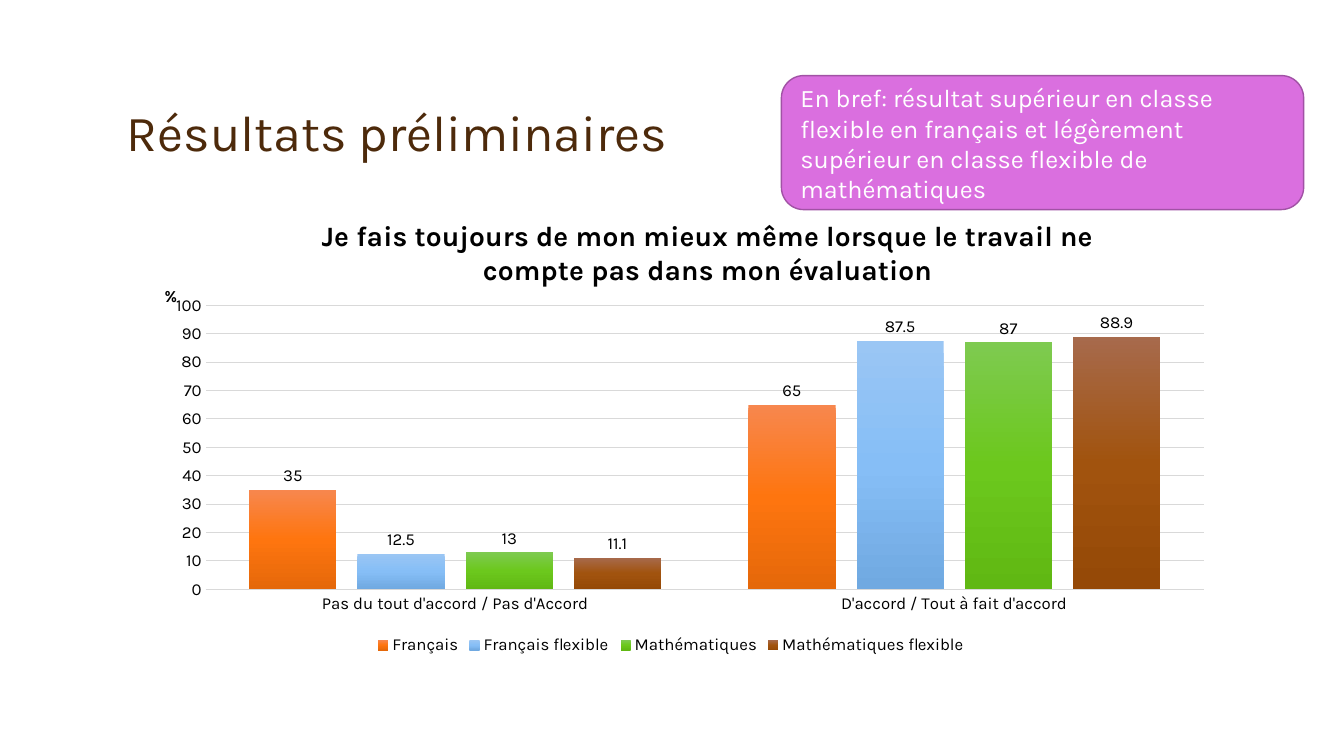
from copy import deepcopy
from dataclasses import dataclass

from lxml import etree
from pptx import Presentation
from pptx.chart.data import CategoryChartData
from pptx.dml.color import RGBColor
from pptx.enum.chart import XL_CHART_TYPE as ChartType
from pptx.enum.chart import XL_LABEL_POSITION as LabelPosition
from pptx.enum.chart import XL_LEGEND_POSITION as LegendPosition
from pptx.enum.chart import XL_TICK_MARK as TickMark
from pptx.enum.shapes import MSO_SHAPE as Shape
from pptx.enum.text import MSO_ANCHOR as Anchor
from pptx.oxml.ns import qn
from pptx.util import Inches, Pt


@dataclass(frozen=True)
class Theme:
    font: str = "Karla"
    heading: str = "4D2A0B"
    ink: str = "000000"
    white: str = "FFFFFF"
    grid: str = "D9D9D9"
    callout: str = "DA6FDF"
    callout_edge: str = "A152A5"
    heading_size: int = 36
    question_size: int = 20
    callout_size: int = 18
    label_size: int = 12


THEME = Theme()

ANSWERS = ["Pas du tout d'accord / Pas d'Accord", "D'accord / Tout à fait d'accord"]
# Class group, percentages, gradient from top to bottom
GROUPS = [
    ("Français", (35, 65), ("F7874E", "FE750F", "E5680A")),
    ("Français flexible", (12.5, 87.5), ("9AC6F4", "86BEF6", "70A9E1")),
    ("Mathématiques", (13, 87), ("7ECA50", "6CC81D", "60B813")),
    ("Mathématiques flexible", (11.1, 88.9), ("A76A4C", "A1530E", "954907")),
]
QUESTION = ("Je fais toujours de mon mieux même lorsque le travail "
            "ne compte pas dans mon évaluation")
SUMMARY = ("En bref: résultat supérieur en classe flexible en français et "
           "légèrement supérieur en classe flexible de mathématiques")


def rgb(value):
    return RGBColor.from_string(value)


def style_font(font, size, color=THEME.ink, bold=False):
    font.name = THEME.font
    font.size = Pt(size)
    font.bold = bold
    font.color.rgb = rgb(color)


def style_line(line, color, width):
    line.color.rgb = rgb(color)
    line.width = Pt(width)


def add_text(slide, box, text, size, color, anchor=Anchor.TOP, spacing=1.0):
    frame = slide.shapes.add_textbox(*map(Inches, box)).text_frame
    frame.word_wrap = True
    frame.vertical_anchor = anchor
    frame.text = text
    paragraph = frame.paragraphs[0]
    paragraph.line_spacing = spacing
    style_font(paragraph.runs[0].font, size, color)


def add_callout_panel(slide, box):
    panel = slide.shapes.add_shape(Shape.ROUNDED_RECTANGLE, *map(Inches, box))
    panel.shadow.inherit = False
    panel.fill.solid()
    panel.fill.fore_color.rgb = rgb(THEME.callout)
    style_line(panel.line, THEME.callout_edge, 1)


def place_part(part, index, **settings):
    """Give a chart part a manual layout, in fractions of the chart."""
    for automatic in part.findall(qn("c:layout")):
        part.remove(automatic)
    layout = etree.Element(qn("c:layout"))
    manual = etree.SubElement(layout, qn("c:manualLayout"))
    for name, value in settings.items():
        etree.SubElement(manual, qn(f"c:{name}")).set("val", str(value))
    part.insert(index, layout)


def write_title(title, text, size, x, y):
    title.text_frame.text = text
    style_font(title.text_frame.paragraphs[0].runs[0].font, size, bold=True)
    title_xml = title._element
    title_xml.find(".//" + qn("a:bodyPr")).set("rot", "0")
    place_part(title_xml, 1, xMode="edge", yMode="edge", x=x, y=y)


def fill_gradient(series, colors):
    fill = series.format.fill
    fill.gradient()
    fill.gradient_angle = 270
    stop_list = series._element.find(".//" + qn("a:gsLst"))
    stop_list.append(deepcopy(stop_list[0]))
    for index, (stop, color) in enumerate(zip(fill.gradient_stops, colors)):
        stop.position = index / 2
        stop.color.rgb = rgb(color)


def style_series(series, colors):
    fill_gradient(series, colors)
    series.invert_if_negative = False
    labels = series.data_labels
    labels.show_value = True
    labels.position = LabelPosition.OUTSIDE_END
    style_font(labels.font, THEME.label_size)


def style_axes(chart):
    answers, percent = chart.category_axis, chart.value_axis
    for axis in (answers, percent):
        axis.major_tick_mark = axis.minor_tick_mark = TickMark.NONE
        style_font(axis.tick_labels.font, THEME.label_size)
    style_line(answers.format.line, THEME.grid, 0.75)
    percent.minimum_scale, percent.maximum_scale = 0, 100
    percent.major_unit = 10
    percent.format.line.fill.background()
    style_line(percent.major_gridlines.format.line, THEME.grid, 0.75)
    write_title(percent.axis_title, "%", THEME.label_size, 0.04, 0.19)


def add_results_chart(slide, box):
    data = CategoryChartData()
    data.categories = ANSWERS
    for name, values, _ in GROUPS:
        data.add_series(name, values)
    chart = slide.shapes.add_chart(
        ChartType.COLUMN_CLUSTERED, *map(Inches, box), data).chart
    style_font(chart.font, THEME.label_size)

    # Question above the columns
    write_title(chart.chart_title, QUESTION, THEME.question_size, 0.18, 0.04)
    chart.chart_title.include_in_layout = False

    # Columns
    columns = chart.plots[0]
    columns.gap_width, columns.overlap = 100, -24
    columns.vary_by_categories = False
    for series, (_, _, colors) in zip(columns.series, GROUPS):
        style_series(series, colors)
    style_axes(chart)
    place_part(chart._chartSpace.find(".//" + qn("c:plotArea")), 0,
               layoutTarget="inner", xMode="edge", yMode="edge",
               x=0.08, y=0.24, w=0.9, h=0.61)

    # Legend
    chart.has_legend = True
    chart.legend.position = LegendPosition.BOTTOM
    chart.legend.include_in_layout = False
    style_font(chart.legend.font, THEME.label_size)


def main():
    deck = Presentation()
    deck.slide_width, deck.slide_height = Inches(13.33), Inches(7.5)
    slide = deck.slides.add_slide(deck.slide_layouts[6])

    # Heading
    add_text(slide, (1.16, 0.33, 11, 1.33), "Résultats préliminaires",
             THEME.heading_size, THEME.heading, Anchor.BOTTOM, 0.9)
    # Survey results
    add_results_chart(slide, (1.16, 1.92, 11, 4.62))
    # Summary callout
    add_callout_panel(slide, (7.75, 0.75, 5.18, 1.33))
    add_text(slide, (7.84, 0.77, 5.09, 1.31), SUMMARY,
             THEME.callout_size, THEME.white)

    deck.save("out.pptx")


if __name__ == "__main__":
    main()
